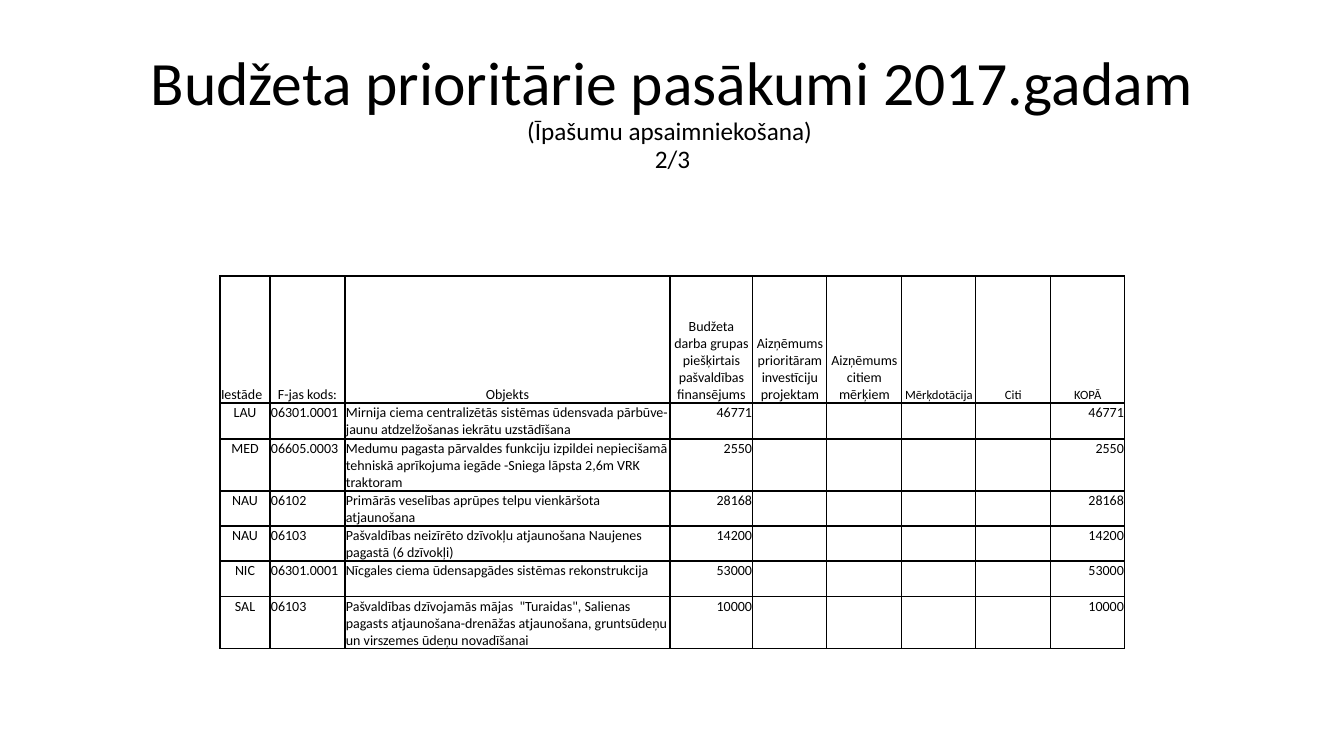
from lxml import etree
from pptx import Presentation
from pptx.dml.color import RGBColor
from pptx.enum import text
from pptx.oxml import ns

# Content
TITLE = "Budžeta prioritārie pasākumi 2017.gadam"
SUBTITLES = ["(Īpašumu apsaimniekošana) ", "2/3"]
HEADERS = [
    "Iestāde", "F-jas kods:", "Objekts",
    "Budžeta darba grupas\vpiešķirtais pašvaldības finansējums",
    "Aizņēmums prioritāram investīciju projektam",
    "Aizņēmums citiem mērķiem", "Mērķdotācija", "Citi", "KOPĀ",
]
# Institution, function code, object, funding (also the total)
PROJECTS = [
    ("LAU", "06301.0001", "Mirnija ciema centralizētās sistēmas ūdensvada "
     "pārbūve-jaunu atdzelžošanas iekrātu uzstādīšana", 46771),
    ("MED", "06605.0003", "Medumu pagasta pārvaldes funkciju izpildei nepiecišamā "
     "tehniskā aprīkojuma iegāde -Sniega lāpsta 2,6m VRK traktoram", 2550),
    ("NAU", "06102", "Primārās veselības aprūpes telpu vienkāršota atjaunošana", 28168),
    ("NAU", "06103", "Pašvaldības neizīrēto dzīvokļu atjaunošana Naujenes "
     "pagastā (6 dzīvokļi)", 14200),
    ("NIC", "06301.0001", "Nīcgales ciema ūdensapgādes sistēmas rekonstrukcija", 53000),
    ("SAL", "06103", "Pašvaldības dzīvojamās mājas  \"Turaidas\", Salienas pagasts "
     "atjaunošana-drenāžas atjaunošana, gruntsūdeņu un virszemes ūdeņu novadīšanai", 10000),
]

# Layout in px
SCALE = 914400 / 100.8
COLUMNS = [50, 75, 325, 83, 74, 75, 74, 75, 74]
ROWS = [127, 36, 52, 35, 35, 36, 52]
TABLE_LEFT, TABLE_TOP = 220, 276
SMALL_HEADERS = HEADERS[-3:]

FONT = "Calibri"
BLACK = RGBColor(0, 0, 0)
LEFT, CENTER, RIGHT = text.PP_ALIGN.LEFT, text.PP_ALIGN.CENTER, text.PP_ALIGN.RIGHT
BODY_ALIGN = [CENTER, LEFT, LEFT] + [RIGHT] * 6


def px(length):
    return round(length * SCALE)


def style(font, size):
    font.name, font.color.rgb = FONT, BLACK
    font.size = round(size * 12700)


def add_borders(cell):
    properties = cell._tc.get_or_add_tcPr()
    for position, side in enumerate(("lnL", "lnR", "lnT", "lnB")):
        line = etree.Element(ns.qn("a:" + side), w="12700")
        fill = etree.SubElement(line, ns.qn("a:solidFill"))
        etree.SubElement(fill, ns.qn("a:srgbClr"), val=str(BLACK))
        properties.insert(position, line)


def fill_cell(cell, words, align, size, anchor):
    cell.fill.background()
    cell.margin_left = cell.margin_right = cell.margin_top = px(1)
    cell.margin_bottom = 0
    cell.vertical_anchor = anchor
    para = cell.text_frame.paragraphs[0]
    para.text = words
    para.alignment = align
    style(para.font, size)
    add_borders(cell)


def add_title(page):
    box = page.shapes.add_textbox(px(93), px(40), px(1159), px(146))
    frame = box.text_frame
    frame.word_wrap = True
    frame.vertical_anchor = text.MSO_ANCHOR.MIDDLE
    para = frame.paragraphs[0]
    para.alignment, para.line_spacing = CENTER, 0.9
    span = para.add_run()
    span.text = TITLE
    style(span.font, 44)
    for words in SUBTITLES:
        para.add_line_break()
        span = para.add_run()
        span.text = words
        style(span.font, 18)


def add_budget_table(page):
    table = page.shapes.add_table(
        len(ROWS), len(COLUMNS), px(TABLE_LEFT), px(TABLE_TOP),
        px(sum(COLUMNS)), px(sum(ROWS))).table
    table.first_row = table.horz_banding = False
    for column, width in zip(table.columns, COLUMNS):
        column.width = px(width)
    for row, height in zip(table.rows, ROWS):
        row.height = px(height)

    # Header row
    for index, words in enumerate(HEADERS):
        fill_cell(table.cell(0, index), words, CENTER if index else LEFT,
                  9 if words in SMALL_HEADERS else 10, text.MSO_ANCHOR.BOTTOM)

    # One row per project, with four empty funding columns
    for number, (office, code, project, amount) in enumerate(PROJECTS, 1):
        values = [office, code, project, str(amount)] + [""] * 4 + [str(amount)]
        for index, (words, align) in enumerate(zip(values, BODY_ALIGN)):
            fill_cell(table.cell(number, index), words, align, 10, text.MSO_ANCHOR.TOP)


def main():
    deck = Presentation()
    deck.slide_width, deck.slide_height = px(1344), px(756)
    page = deck.slides.add_slide(deck.slide_layouts[6])
    add_title(page)
    add_budget_table(page)
    deck.save("out.pptx")


if __name__ == "__main__":
    main()
